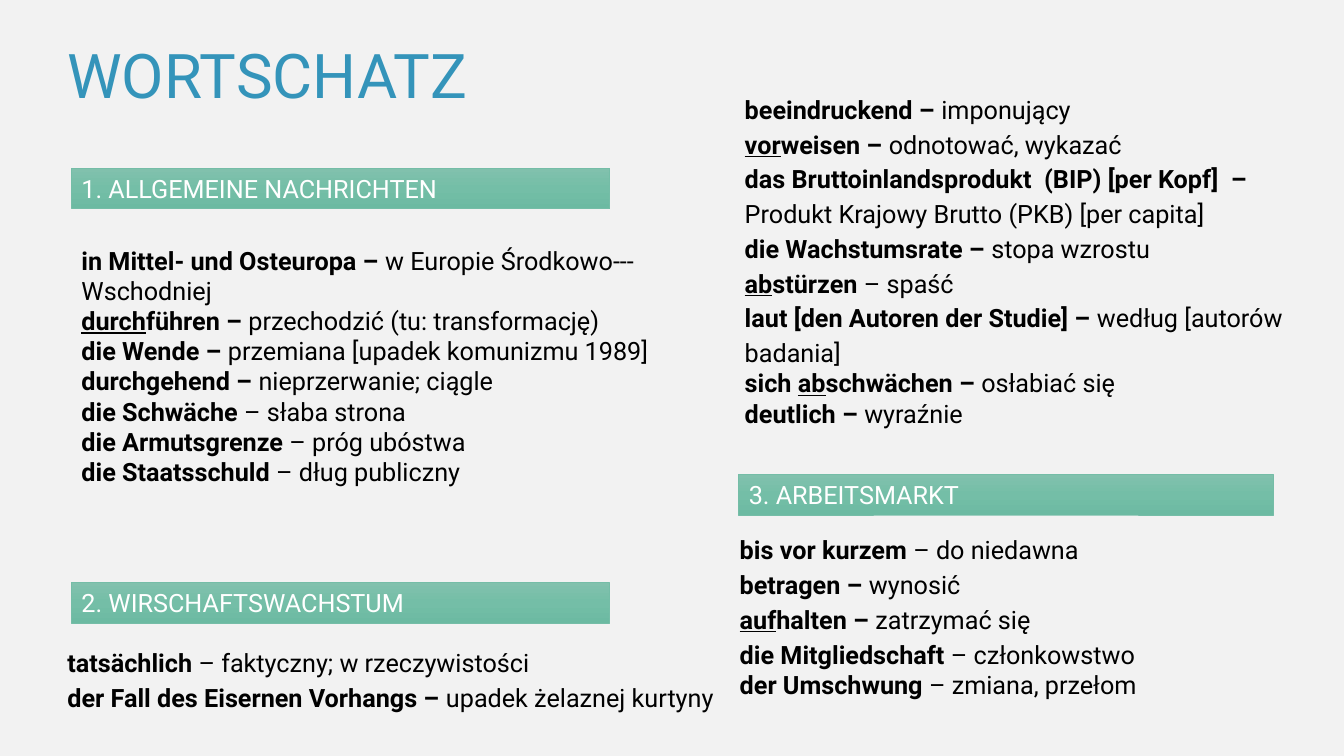
from copy import deepcopy

from pptx import Presentation
from pptx.dml.color import RGBColor as RGB
from pptx.enum.shapes import MSO_SHAPE as SHAPE
from pptx.enum.text import MSO_ANCHOR as ANCHOR, PP_ALIGN as ALIGN
from pptx.util import Inches, Pt

COLORS = {
    "background": "F2F2F2", "title": "3494BA", "text": "000000",
    "bar_text": "FFFFFF", "bar_line": "75BDA7",
    "bar_top": "81C1AD", "bar_middle": "74BEA7", "bar_bottom": "6CBAA2",
}

# Grid of tenths of an inch
CELL = Inches(0.1)
COLS, ROWS = 133.33, 75
BAR_ROWS = 4

# Section bars: column, row, width, caption
BARS = [
    (7.1, 16.7, 53.4, "1. ALLGEMEINE NACHRICHTEN"),
    (7.1, 57.8, 53.4, "2. WIRSCHAFTSWACHSTUM"),
    (73.3, 47.1, 53, "3. ARBEITSMARKT"),
]

# Word lists: box, loosely spaced entries, tightly spaced entries.
# An entry is "German|Polish", with _separable prefixes_ underlined.
WORD_LISTS = [
    ((7.1, 23.8, 59.6, 34.3), [], [
        "in Mittel- und Osteuropa – |w Europie Środkowo---Wschodniej",
        "_durch_führen – |przechodzić (tu: transformację)",
        "die Wende – |przemiana [upadek komunizmu 1989]",
        "durchgehend – |nieprzerwanie; ciągle",
        "die Schwäche| – słaba strona",
        "die Armutsgrenze| – próg ubóstwa",
        "die Staatsschuld| – dług publiczny",
    ]),
    ((5.7, 63.3, 66.7, 11.2), [
        "tatsächlich |– faktyczny; w rzeczywistości",
        "der Fall des Eisernen Vorhangs – |upadek żelaznej kurtyny",
    ], []),
    ((72.9, 8.4, 59.6, 38.2), [
        "beeindruckend – |imponujący",
        "_vor_weisen – |odnotować, wykazać",
        "das Bruttoinlandsprodukt  (BIP) [per Kopf]  – "
        "|Produkt Krajowy Brutto (PKB) [per capita]",
        "die Wachstumsrate – |stopa wzrostu",
        "_ab_stürzen |– spaść",
        "laut [den Autoren der Studie] – |według [autorów badania]",
    ], [
        "sich _ab_schwächen – |osłabiać się",
        "deutlich – |wyraźnie",
    ]),
    ((72.4, 52.1, 59.6, 21), [
        "bis vor kurzem |– do niedawna",
        "betragen – |wynosić",
        "_auf_halten – |zatrzymać się",
        "die Mitgliedschaft| – członkowstwo",
    ], [
        "der Umschwung| – zmiana, przełom",
    ]),
]


def color(name):
    return RGB.from_string(COLORS[name])


def grid(*cells):
    return [int(c * CELL) for c in cells]


def add_run(p, text, color_name="text", **formats):
    r = p.add_run()
    r.text = text
    for name, value in {"name": "Roboto", "size": Pt(18), **formats}.items():
        setattr(r.font, name, value)
    r.font.color.rgb = color(color_name)


def add_text_box(s, box):
    tf = s.shapes.add_textbox(*grid(*box)).text_frame
    tf.word_wrap = True
    return tf


def add_bar(s, col, row, width, caption):
    sp = s.shapes.add_shape(SHAPE.RECTANGLE, *grid(col, row, width, BAR_ROWS))
    sp.shadow.inherit = False
    sp.line.color.rgb = color("bar_line")
    sp.line.width = Pt(0.5)

    # Three-stop gradient running downwards
    sp.fill.gradient()
    sp.fill.gradient_angle = 270
    first = sp.fill._fill._gradFill.gsLst[0]
    first.addnext(deepcopy(first))
    stops = zip(sp.fill.gradient_stops, (0, 0.5, 1),
                ("bar_top", "bar_middle", "bar_bottom"))
    for stop, position, name in stops:
        stop.position = position
        stop.color.rgb = color(name)

    tf = sp.text_frame
    tf.word_wrap = True
    tf.vertical_anchor = ANCHOR.TOP
    p = tf.paragraphs[0]
    p.alignment = ALIGN.JUSTIFY
    add_run(p, caption, "bar_text")


def add_word_list(s, box, loose, tight):
    tf = add_text_box(s, box)
    for i, entry in enumerate(loose + tight):
        p = tf.add_paragraph() if i else tf.paragraphs[0]
        p.line_spacing = 1.15 if i < len(loose) else 1.0
        german, polish = entry.split("|")
        for n, part in enumerate(german.split("_")):
            if part:
                add_run(p, part, bold=True, underline=n % 2 == 1)
        add_run(p, polish)


def main():
    prs = Presentation()
    prs.slide_width, prs.slide_height = grid(COLS, ROWS)
    s = prs.slides.add_slide(prs.slide_layouts[6])
    s.background.fill.solid()
    s.background.fill.fore_color.rgb = color("background")

    # Title
    title = add_text_box(s, (5.7, 3.2, 101.4, 10.4))
    add_run(title.paragraphs[0], "WORTSCHATZ", "title", size=Pt(44))

    # Sections
    for bar in BARS:
        add_bar(s, *bar)
    for word_list in WORD_LISTS:
        add_word_list(s, *word_list)

    prs.save("out.pptx")


if __name__ == "__main__":
    main()
